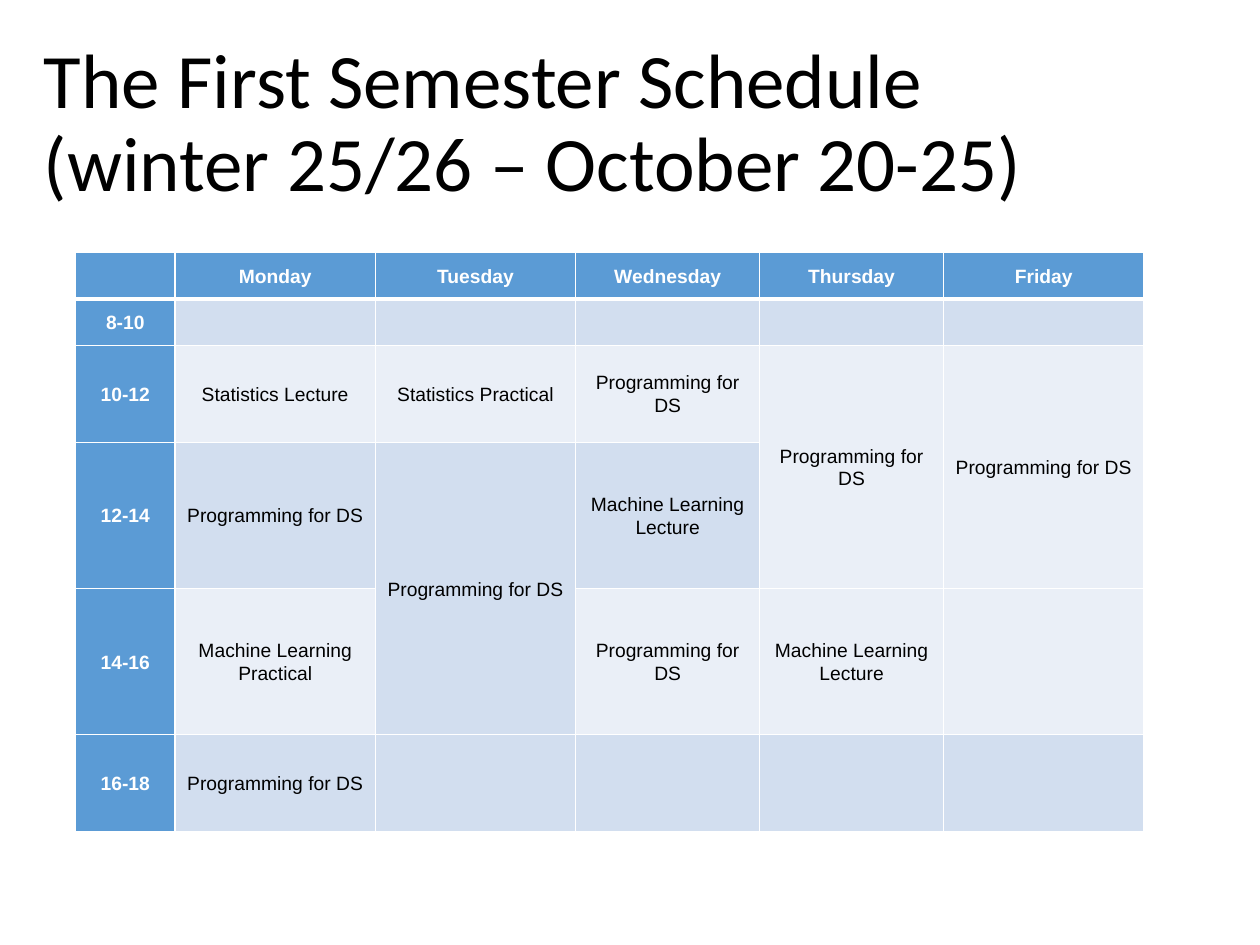
from lxml import etree
from pptx import Presentation
from pptx.dml.color import RGBColor
from pptx.enum.text import MSO_ANCHOR, PP_ALIGN
from pptx.oxml.ns import qn
from pptx.util import Inches, Pt

MIDDLE = MSO_ANCHOR.MIDDLE
CENTER = PP_ALIGN.CENTER
WIDTH, HEIGHT = 10, 7.5
BLUE, WHITE, BLACK = "5B9BD5", "FFFFFF", "000000"
BANDS = ["D2DEEF", "EAEFF7"]

TITLE = ["The First Semester Schedule", "(winter 25/26 – October 20-25)"]
DS = "Programming for DS"
LECTURE = "Machine Learning Lecture"
SCHEDULE = [
    ["", "Monday", "Tuesday", "Wednesday", "Thursday", "Friday"],
    ["8-10", "", "", "", "", ""],
    ["10-12", "Statistics Lecture", "Statistics Practical", DS, DS, DS],
    ["12-14", DS, DS, LECTURE, "", ""],
    ["14-16", "Machine Learning Practical", "", DS, LECTURE, ""],
    ["16-18", DS, "", "", "", ""],
]
# First row and column of each class that fills two time slots
DOUBLE_SLOTS = [(2, 4), (2, 5), (3, 2)]
COLUMN_WIDTHS = [0.79, 1.59, 1.59, 1.46, 1.46, 1.59]
ROW_HEIGHTS = [0.37, 0.37, 0.77, 1.16, 1.16, 0.77]


def color(value):
    return RGBColor.from_string(value)


class SlideBuilder:
    """Holds the style and the current slide; positions are shares of its size."""

    title_font, title_size = "Calibri", 44
    table_font, table_size = "Arial", 11

    def __init__(self, deck):
        self.page = deck.slides.add_slide(deck.slide_layouts[6])

    def place(self, left, top, width, height):
        return (Inches(left * WIDTH), Inches(top * HEIGHT),
                Inches(width * WIDTH), Inches(height * HEIGHT))

    def add_span(self, para, text, font, size, ink, bold=False):
        span = para.add_run()
        span.text = text
        span.font.name = font
        span.font.size = Pt(size)
        span.font.bold = bold
        span.font.color.rgb = color(ink)

    def title(self, lines, *area):
        box = self.page.shapes.add_textbox(*self.place(*area))
        frame = box.text_frame
        frame.word_wrap = True
        frame.vertical_anchor = MIDDLE
        para = frame.paragraphs[0]
        para.line_spacing = 0.9
        for number, line in enumerate(lines):
            if number:
                para.add_line_break()
            self.add_span(para, line, self.title_font, self.title_size, BLACK)

    def border(self, cell, side, points):
        properties = cell._tc.get_or_add_tcPr()
        line = etree.SubElement(properties, qn("a:ln" + side), w=str(Pt(points)))
        fill = etree.SubElement(line, qn("a:solidFill"))
        etree.SubElement(fill, qn("a:srgbClr"), val=WHITE)

    def cell(self, cell, text, row, column):
        heading = row == 0 or column == 0
        # A thick line parts the day names from the time slots
        for side in "LRTB":
            thick = (row, side) in [(0, "B"), (1, "T")]
            self.border(cell, side, 3 if thick else 1)
        cell.fill.solid()
        cell.fill.fore_color.rgb = color(BLUE if heading else BANDS[(row - 1) % 2])
        cell.vertical_anchor = MIDDLE
        cell.margin_left = cell.margin_right = Inches(0.07)
        cell.margin_top = cell.margin_bottom = 0
        para = cell.text_frame.paragraphs[0]
        para.alignment = CENTER
        para.line_spacing = 1.07
        para.space_after = Pt(8)
        if text:
            self.add_span(para, text, self.table_font, self.table_size,
                          WHITE if heading else BLACK, heading)

    def table(self, rows, widths, heights, doubles, left, top):
        area = self.place(left, top, sum(widths) / WIDTH, sum(heights) / HEIGHT)
        table = self.page.shapes.add_table(len(rows), len(widths), *area).table
        for column, width in zip(table.columns, widths):
            column.width = Inches(width)
        for row, height in zip(table.rows, heights):
            row.height = Inches(height)
        for row, texts in enumerate(rows):
            for column, text in enumerate(texts):
                self.cell(table.cell(row, column), text, row, column)
        for row, column in doubles:
            table.cell(row, column).merge(table.cell(row + 1, column))


def main():
    deck = Presentation()
    deck.slide_width, deck.slide_height = Inches(WIDTH), Inches(HEIGHT)
    builder = SlideBuilder(deck)
    # Heading
    builder.title(TITLE, 0.025, 0.036, 0.862, 0.193)
    # Weekly timetable
    builder.table(SCHEDULE, COLUMN_WIDTHS, ROW_HEIGHTS, DOUBLE_SLOTS, 0.06, 0.267)
    deck.save("out.pptx")


if __name__ == "__main__":
    main()
